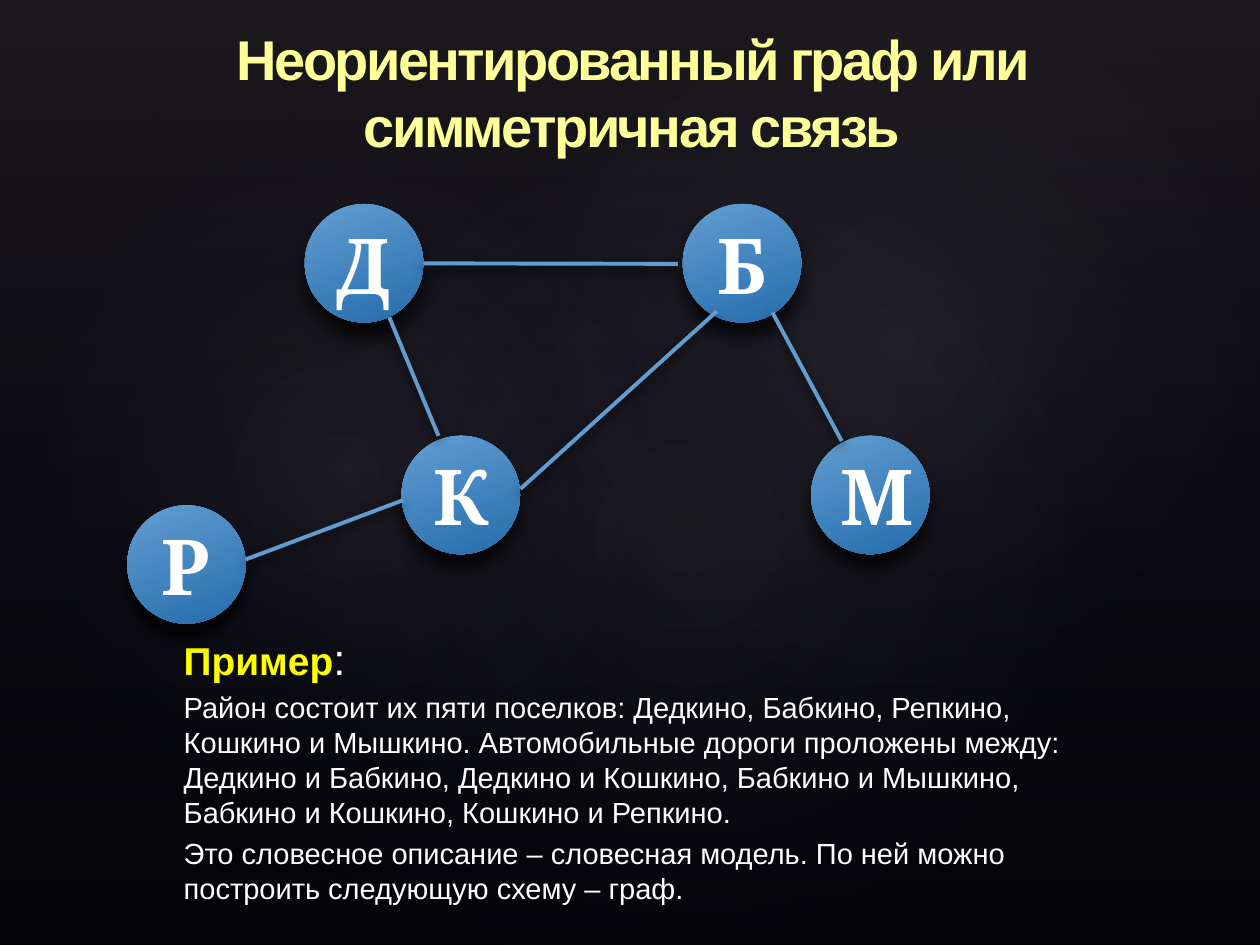
from lxml.etree import SubElement
from pptx import Presentation
from pptx.dml.color import RGBColor
from pptx.enum.shapes import MSO_CONNECTOR, MSO_SHAPE
from pptx.enum.text import MSO_ANCHOR, PP_ALIGN
from pptx.oxml import parse_xml
from pptx.oxml.ns import nsdecls, qn
from pptx.util import Pt

COLORS = {
    "background": "000000", "haze_top": "504652", "haze_bottom": "242852",
    "glow": "C4BCC6", "title": "FFFF99", "heading": "FFFF00", "text": "FFFFFF",
    "node_top": "629DD1", "node_bottom": "256DAD", "edge": "629DD1",
    "shadow": "000000",
}
# left, top, width, height, rotation, opacity
GLOWS = [
    (108, 82, 570, 449, 328.7, 7),
    (-21.6, 92.2, 436.3, 352.8, 294.3, 8),
    (257.8, 9.4, 510.5, 374.4, 328.7, 8),
]
NODE_SIZE = 67.7
VILLAGES = {
    "Д": (174.2, 116.6), "К": (229.5, 249), "Р": (72.7, 288.7),
    "М": (463.5, 249), "Б": (390.2, 116.6),
}
ROADS = [
    ((140.4, 319.7), (230.4, 285.8)),
    ((222.5, 181.4), (250.6, 249.1)),
    ((241.9, 150.5), (387.4, 150.8)),
    ((441.4, 178.6), (481, 252)),
    ((297.4, 279.4), (409.7, 177.8)),
]
STORY = [
    "Район состоит их пяти поселков: Дедкино, Бабкино, Репкино, Кошкино и Мышкино. "
    "Автомобильные дороги проложены между: Дедкино и Бабкино, Дедкино и Кошкино, "
    "Бабкино и Мышкино, Бабкино и Кошкино, Кошкино и Репкино.",
    "Это словесное описание – словесная модель. По ней можно построить следующую "
    "схему – граф.",
]


def rgb(color):
    return RGBColor.from_string(COLORS[color])


def apply(target, values):
    for name, value in values.items():
        setattr(target, name, value)


def add_run(paragraph, text, color, size, bold=False, font="Arial"):
    run = paragraph.add_run()
    run.text = text
    apply(run.font, {"name": font, "size": Pt(size), "bold": bold})
    run.font.color.rgb = rgb(color)
    return run


def fill_gradient(shape, stops, angle=None):
    """Fill with (position %, color, opacity %) stops; radial without an angle."""
    stop_xml = "".join(
        f'<a:gs pos="{position * 1000}"><a:srgbClr val="{COLORS[color]}">'
        f'<a:alpha val="{opacity * 1000}"/></a:srgbClr></a:gs>'
        for position, color, opacity in stops
    )
    if angle is None:
        direction = ('<a:path path="circle"><a:fillToRect l="50000" t="50000" '
                     'r="50000" b="50000"/></a:path>')
    else:
        direction = f'<a:lin ang="{angle * 60000}" scaled="0"/>'
    gradient = parse_xml(f'<a:gradFill {nsdecls("a")} rotWithShape="1">'
                         f'<a:gsLst>{stop_xml}</a:gsLst>{direction}</a:gradFill>')
    shape._element.spPr.find(qn("a:ln")).addprevious(gradient)


def add_shadow(effects, opacity, blur, distance):
    """Put a shadow falling straight down into an effect list."""
    shadow = SubElement(effects, qn("a:outerShdw"), blurRad=str(Pt(blur)),
                        dist=str(Pt(distance)), dir="5400000", rotWithShape="0")
    color = SubElement(shadow, qn("a:srgbClr"), val=COLORS["shadow"])
    SubElement(color, qn("a:alpha"), val=str(opacity * 1000))


def add_plain_shape(slide, kind, *box):
    shape = slide.shapes.add_shape(kind, *map(Pt, box))
    shape.shadow.inherit = False
    shape.line.fill.background()
    return shape


def add_backdrop(slide, width, height):
    slide.background.fill.solid()
    slide.background.fill.fore_color.rgb = rgb("background")
    haze = add_plain_shape(slide, MSO_SHAPE.RECTANGLE, 0, 0, width, height)
    fill_gradient(haze, [(0, "haze_top", 36), (100, "haze_bottom", 10)], 90)
    for *box, rotation, opacity in GLOWS:
        glow = add_plain_shape(slide, MSO_SHAPE.OVAL, *box)
        glow.rotation = rotation
        fill_gradient(glow, [(0, "glow", opacity), (58, "haze_bottom", 0)])


def add_village(slide, letter, left, top):
    village = add_plain_shape(slide, MSO_SHAPE.OVAL, left, top, NODE_SIZE, NODE_SIZE)
    fill_gradient(village, [(0, "node_top", 100), (100, "node_bottom", 100)], 69)
    add_shadow(village._element.spPr.find(qn("a:effectLst")), 70, 9, 9)
    village.text_frame.vertical_anchor = MSO_ANCHOR.MIDDLE
    paragraph = village.text_frame.paragraphs[0]
    paragraph.alignment = PP_ALIGN.CENTER
    add_run(paragraph, letter, "text", 44, True, "Cambria")


def add_road(slide, start, end):
    road = slide.shapes.add_connector(MSO_CONNECTOR.STRAIGHT, *map(Pt, start + end))
    road.line.color.rgb = rgb("edge")
    road.line.width = Pt(2.25)
    add_shadow(SubElement(road._element.spPr, qn("a:effectLst")), 60, 6, 3)


def add_story(slide):
    box = slide.shapes.add_textbox(Pt(105), Pt(360.8), Pt(531), Pt(157))
    frame = box.text_frame
    apply(frame, {"word_wrap": True, "margin_left": 0, "margin_right": 0,
                  "margin_top": 0, "margin_bottom": 0})
    heading = frame.paragraphs[0]
    add_run(heading, "Пример", "heading", 22.2, True)
    add_run(heading, ":", "text", 25)
    for text in STORY:
        paragraph = frame.add_paragraph()
        apply(paragraph, {"space_before": Pt(3.3), "line_spacing": Pt(20)})
        add_run(paragraph, text, "text", 16.6)


def add_title(slide, text):
    title = slide.shapes.title
    slide.shapes._spTree.append(title._element)  # in front of the backdrop
    apply(title, {"left": Pt(77.8), "top": Pt(10.6),
                  "width": Pt(566.6), "height": Pt(85)})
    apply(title.text_frame, {"word_wrap": True, "vertical_anchor": MSO_ANCHOR.TOP})
    paragraph = title.text_frame.paragraphs[0]
    apply(paragraph, {"alignment": PP_ALIGN.CENTER, "line_spacing": Pt(38.3),
                      "space_before": Pt(0)})
    run = add_run(paragraph, text, "title", 32, True)
    run.font._element.set("spc", "-150")


def main():
    width, height = 720, 540
    presentation = Presentation()
    apply(presentation, {"slide_width": Pt(width), "slide_height": Pt(height)})
    slide = presentation.slides.add_slide(presentation.slide_layouts[5])
    add_backdrop(slide, width, height)
    add_story(slide)
    for letter, position in VILLAGES.items():
        add_village(slide, letter, *position)
    for start, end in ROADS:
        add_road(slide, start, end)
    add_title(slide, "Неориентированный граф или симметричная связь")
    presentation.save("out.pptx")


if __name__ == "__main__":
    main()
